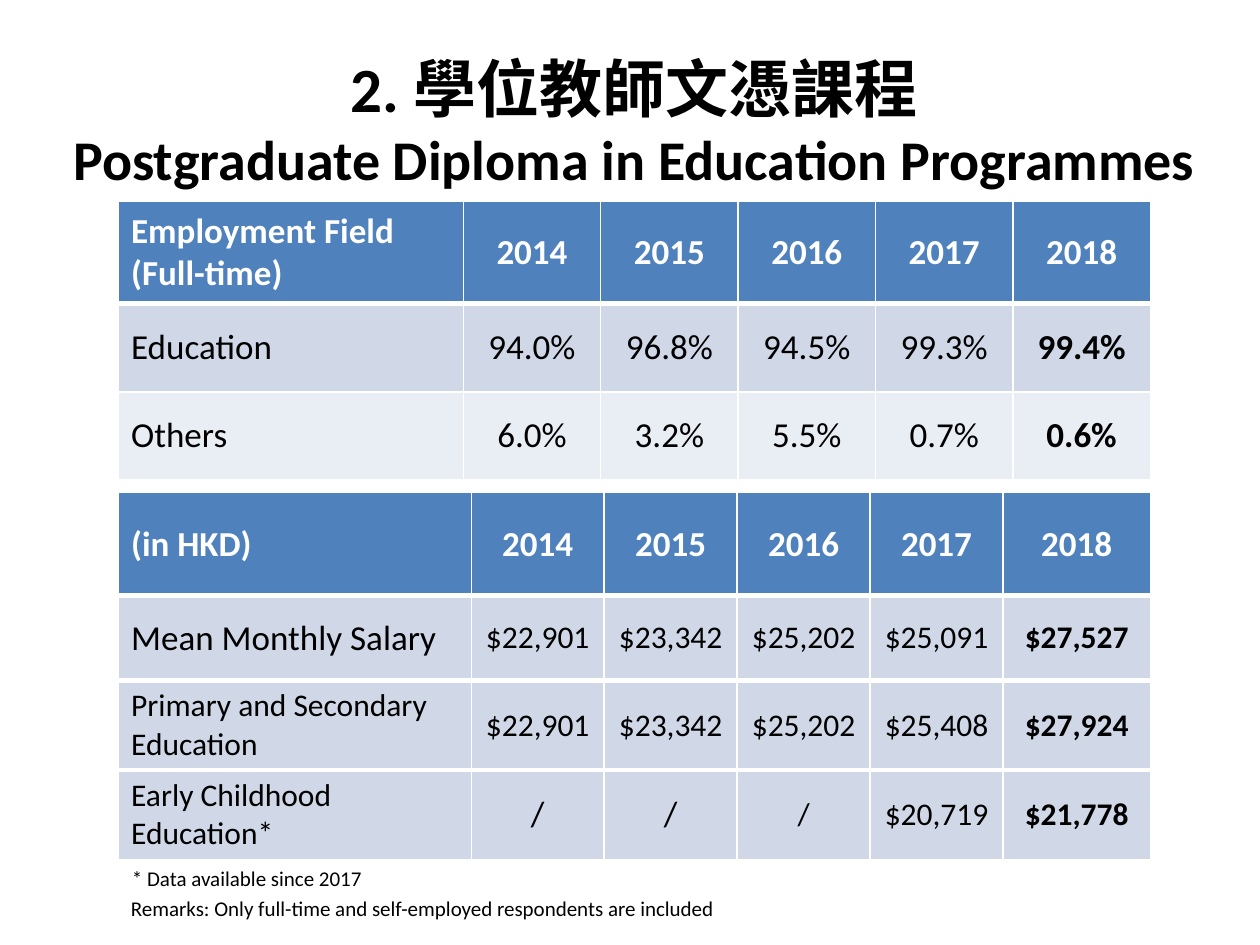
from lxml.etree import SubElement
from pptx import Presentation
from pptx.dml.color import RGBColor
from pptx.enum.text import MSO_ANCHOR as Anchor, PP_ALIGN as Align
from pptx.oxml.ns import qn
from pptx.util import Cm, Pt

FONT = "Calibri"
BLACK = RGBColor(0, 0, 0)
WHITE = RGBColor(0xFF, 0xFF, 0xFF)
HEADER_BLUE = RGBColor(0x4F, 0x81, 0xBD)
BAND_DARK = RGBColor(0xD0, 0xD8, 0xE8)
BAND_LIGHT = RGBColor(0xE9, 0xED, 0xF4)

LEFT, TABLE_WIDTH = 2.39, 20.8
YEARS = ["2014", "2015", "2016", "2017", "2018"]

EMPLOYMENT_ROWS = [
    ["Employment Field (Full-time)", *YEARS],
    ["Education", "94.0%", "96.8%", "94.5%", "99.3%", "99.4%"],
    ["Others", "6.0%", "3.2%", "5.5%", "0.7%", "0.6%"],
]
EMPLOYMENT_SIZES = [[20] * 6] * 3

SALARY_ROWS = [
    ["(in HKD)", *YEARS],
    ["Mean Monthly Salary", "$22,901", "$23,342", "$25,202", "$25,091", "$27,527"],
    ["Primary and Secondary Education",
     "$22,901", "$23,342", "$25,202", "$25,408", "$27,924"],
    ["Early Childhood Education*", "/", "/", "/", "$20,719", "$21,778"],
]
SALARY_SIZES = [
    [20] * 6,
    [20] + [18] * 5,
    [18] * 6,
    [18, 20, 20, 18, 18, 18],
]


def style_font(font, size, color=BLACK, bold=False):
    font.name = FONT
    font.size = Pt(size)
    font.bold = bold
    font.color.rgb = color


def set_borders(cell, top, bottom):
    """Draw white cell edges; the side edges are always 1 pt."""
    properties = cell._tc.get_or_add_tcPr()
    edges = {"a:lnL": 1, "a:lnR": 1, "a:lnT": top, "a:lnB": bottom}
    for index, (tag, width) in enumerate(edges.items()):
        line = SubElement(properties, qn(tag), w=str(Pt(width)))
        fill = SubElement(line, qn("a:solidFill"))
        SubElement(fill, qn("a:srgbClr"), val=str(WHITE))
        properties.insert(index, line)


def add_data_table(page, top, rows, sizes, widths, heights, fills, rules):
    """Add a table; rules holds the widths of its horizontal lines, top to bottom."""
    table = page.shapes.add_table(
        len(rows), len(widths), Cm(LEFT), Cm(top), Cm(TABLE_WIDTH), Cm(sum(heights))
    ).table
    table.horz_banding = False
    for column, width in zip(table.columns, widths):
        column.width = Cm(width)
    for row, height in zip(table.rows, heights):
        row.height = Cm(height)

    last = len(widths) - 1
    for r, texts in enumerate(rows):
        for c, text in enumerate(texts):
            cell = table.cell(r, c)
            cell.text = text
            cell.vertical_anchor = Anchor.MIDDLE
            cell.fill.solid()
            cell.fill.fore_color.rgb = fills[r]
            set_borders(cell, rules[r], rules[r + 1])
            para = cell.text_frame.paragraphs[0]
            para.alignment = Align.CENTER if c else Align.LEFT
            style_font(para.font, sizes[r][c], BLACK if r else WHITE,
                       bold=r == 0 or c == last)


def add_text_box(page, left, top, width, height, wrap=True):
    box = page.shapes.add_textbox(Cm(left), Cm(top), Cm(width), Cm(height))
    box.text_frame.word_wrap = wrap
    return box.text_frame


def add_title(page):
    frame = add_text_box(page, 0.79, 0.53, 24, 3.81)
    frame.vertical_anchor = Anchor.MIDDLE
    para = frame.paragraphs[0]
    para.alignment = Align.CENTER
    chinese = para.add_run()
    chinese.text = "2. 學位教師文憑課程"
    style_font(chinese.font, 36, bold=True)
    para.add_line_break()
    english = para.add_run()
    english.text = "Postgraduate Diploma in Education Programmes"
    style_font(english.font, 32, bold=True)


def add_note(page, text, left, top, width, wrap=True):
    frame = add_text_box(page, left, top, width, 0.77, wrap)
    frame.text = text
    style_font(frame.paragraphs[0].font, 12)


def main():
    deck = Presentation()
    deck.slide_width, deck.slide_height = Cm(25.4), Cm(19.05)
    page = deck.slides.add_slide(deck.slide_layouts[6])

    add_data_table(
        page, 4.06, EMPLOYMENT_ROWS, EMPLOYMENT_SIZES,
        widths=[6.95] + [2.77] * 5,
        heights=[2.06, 1.78, 1.78],
        fills=[HEADER_BLUE, BAND_DARK, BAND_LIGHT],
        rules=[1, 3, 1, 1],
    )
    add_data_table(
        page, 9.93, SALARY_ROWS, SALARY_SIZES,
        widths=[7.11] + [2.68] * 4 + [2.97],
        heights=[2.08, 1.71, 1.79, 1.79],
        fills=[HEADER_BLUE] + [BAND_DARK] * 3,
        rules=[1, 3, 3, 3, 1],
    )
    add_note(page, "Remarks: Only full-time and self-employed respondents are included",
             LEFT, 17.93, 12.6)
    add_title(page)
    add_note(page, "* Data available since 2017", 2.41, 17.32, 5.31, wrap=False)

    deck.save("out.pptx")


if __name__ == "__main__":
    main()
